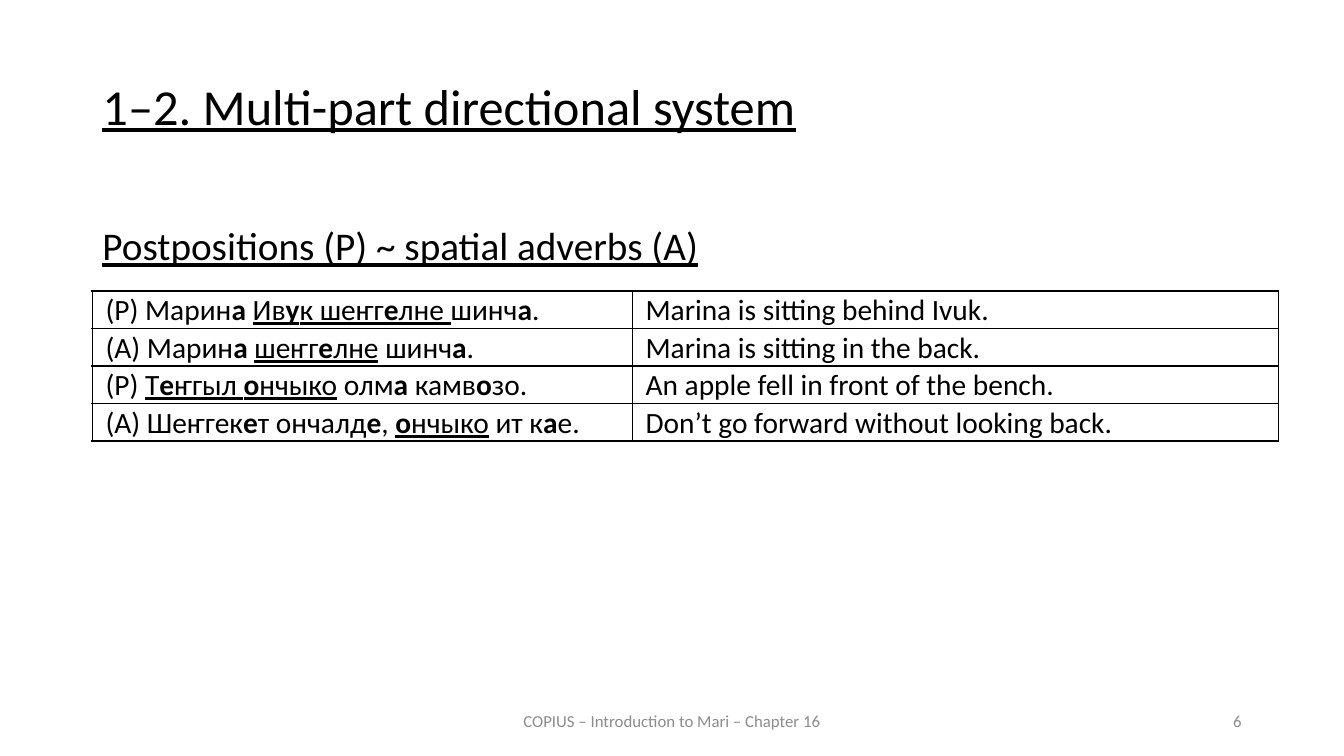
from dataclasses import dataclass

from lxml import etree
from pptx import Presentation
from pptx import util as u
from pptx.dml import color
from pptx.enum import text as t
from pptx.oxml import ns


@dataclass(frozen=True)
class Theme:
    font: str = "Calibri"
    ink: str = "000000"
    muted: str = "8C8C8C"
    title: int = 36
    heading: int = 28
    example: int = 21
    footer: int = 12
    thin: float = 1
    thick: float = 1.5


EXAMPLES = [
    ("(P) Марин*а *_Ив*у*к шеҥг*е*лне _шинч*а*.", "Marina is sitting behind Ivuk."),
    ("(A) Марин*а *_шеҥг*е*лне_ шинч*а*.", "Marina is sitting in the back."),
    ("(P) _Т*е*ҥгыл *о*нчыко_ олм*а* камв*о*зо.", "An apple fell in front of the bench."),
    ("(A) Шеҥгек*е*т ончалд*е*, _*о*нчыко_ ит к*а*е.", "Don’t go forward without looking back."),
]


def styled_pieces(markup):
    bold = underline = False
    piece = ""
    for mark in markup:
        if mark not in "*_":
            piece += mark
            continue
        if piece:
            yield piece, bold, underline
        piece = ""
        bold ^= mark == "*"
        underline ^= mark == "_"
    if piece:
        yield piece, bold, underline


class LessonSlide:
    columns, rows = 160, 90

    def __init__(self, deck, theme):
        self.deck, self.theme = deck, theme
        self.page = deck.slides.add_slide(deck.slide_layouts[1])

    def across(self, columns):
        return round(self.deck.slide_width * columns / self.columns)

    def down(self, rows):
        return round(self.deck.slide_height * rows / self.rows)

    def area(self, left, top, width, height):
        return self.across(left), self.down(top), self.across(width), self.down(height)

    def add_spans(self, para, markup, size, ink, align):
        para.alignment = align
        for words, bold, underline in styled_pieces(markup):
            span = para.add_run()
            span.text = words
            span.font.name = self.theme.font
            span.font.size = u.Pt(size)
            span.font.bold = bold
            span.font.underline = underline
            span.font.color.rgb = color.RGBColor.from_string(ink)

    def heading(self, box, area, words, size, before, align):
        box.left, box.top, box.width, box.height = self.area(*area)
        frame = box.text_frame
        frame.auto_size = t.MSO_AUTO_SIZE.NONE
        frame.vertical_anchor = t.MSO_ANCHOR.TOP
        para = frame.paragraphs[0]
        para.line_spacing = 0.9
        para.space_before = u.Pt(before)
        self.add_spans(para, f"_{words}_", size, self.theme.ink, align)
        layout = para._p.get_or_add_pPr()
        layout.set("marL", "0")
        layout.set("indent", "0")
        etree.SubElement(layout, ns.qn("a:buNone"))

    def footer(self, area, words, align):
        box = self.page.shapes.add_textbox(*self.area(*area))
        frame = box.text_frame
        frame.word_wrap = True
        frame.vertical_anchor = t.MSO_ANCHOR.MIDDLE
        self.add_spans(frame.paragraphs[0], words, self.theme.footer, self.theme.muted, align)

    def border(self, cell, side, width):
        line = etree.SubElement(cell._tc.get_or_add_tcPr(), ns.qn(f"a:ln{side}"), w=str(u.Pt(width)))
        fill = etree.SubElement(line, ns.qn("a:solidFill"))
        etree.SubElement(fill, ns.qn("a:srgbClr"), val=self.theme.ink)

    def table(self, left, top, widths, row_height, lines):
        area = self.area(left, top, sum(widths), row_height * len(lines))
        table = self.page.shapes.add_table(len(lines), len(widths), *area).table
        table.first_row = table.horz_banding = False
        for column, width in zip(table.columns, widths):
            column.width = self.across(width)
        for row, line in enumerate(lines):
            table.rows[row].height = self.down(row_height)
            for column, words in enumerate(line):
                cell = table.cell(row, column)
                cell.margin_left = cell.margin_right = u.Inches(0.13)
                cell.margin_top, cell.margin_bottom = u.Inches(0.02), 0
                thick_sides = {
                    "L": column == 0,
                    "R": column == len(widths) - 1,
                    "T": row % 2 == 0,
                    "B": row % 2 == 1,
                }
                for side, thick in thick_sides.items():
                    self.border(cell, side, self.theme.thick if thick else self.theme.thin)
                cell.fill.background()
                self.add_spans(cell.text_frame.paragraphs[0], words, self.theme.example,
                               self.theme.ink, t.PP_ALIGN.JUSTIFY)


def main():
    deck = Presentation()
    deck.slide_width, deck.slide_height = u.Inches(13.33), u.Inches(7.5)
    theme = Theme()
    lesson = LessonSlide(deck, theme)
    title, body = lesson.page.placeholders
    lesson.heading(title, (11, 9.1, 138, 10), "1–2. Multi-part directional system",
                   theme.title, 12, t.PP_ALIGN.JUSTIFY)
    lesson.footer((53, 83.4, 54, 4.8), "COPIUS – Introduction to Mari – Chapter 16", t.PP_ALIGN.CENTER)
    lesson.footer((113, 83.4, 36, 4.8), "6", t.PP_ALIGN.RIGHT)
    lesson.table(11, 34.6, (64.3, 76.9), 4.48, EXAMPLES)
    lesson.heading(body, (11, 26.4, 138, 7), "Postpositions (P) ~ spatial adverbs (A)",
                   theme.heading, 10, t.PP_ALIGN.LEFT)
    deck.save("out.pptx")


if __name__ == "__main__":
    main()
